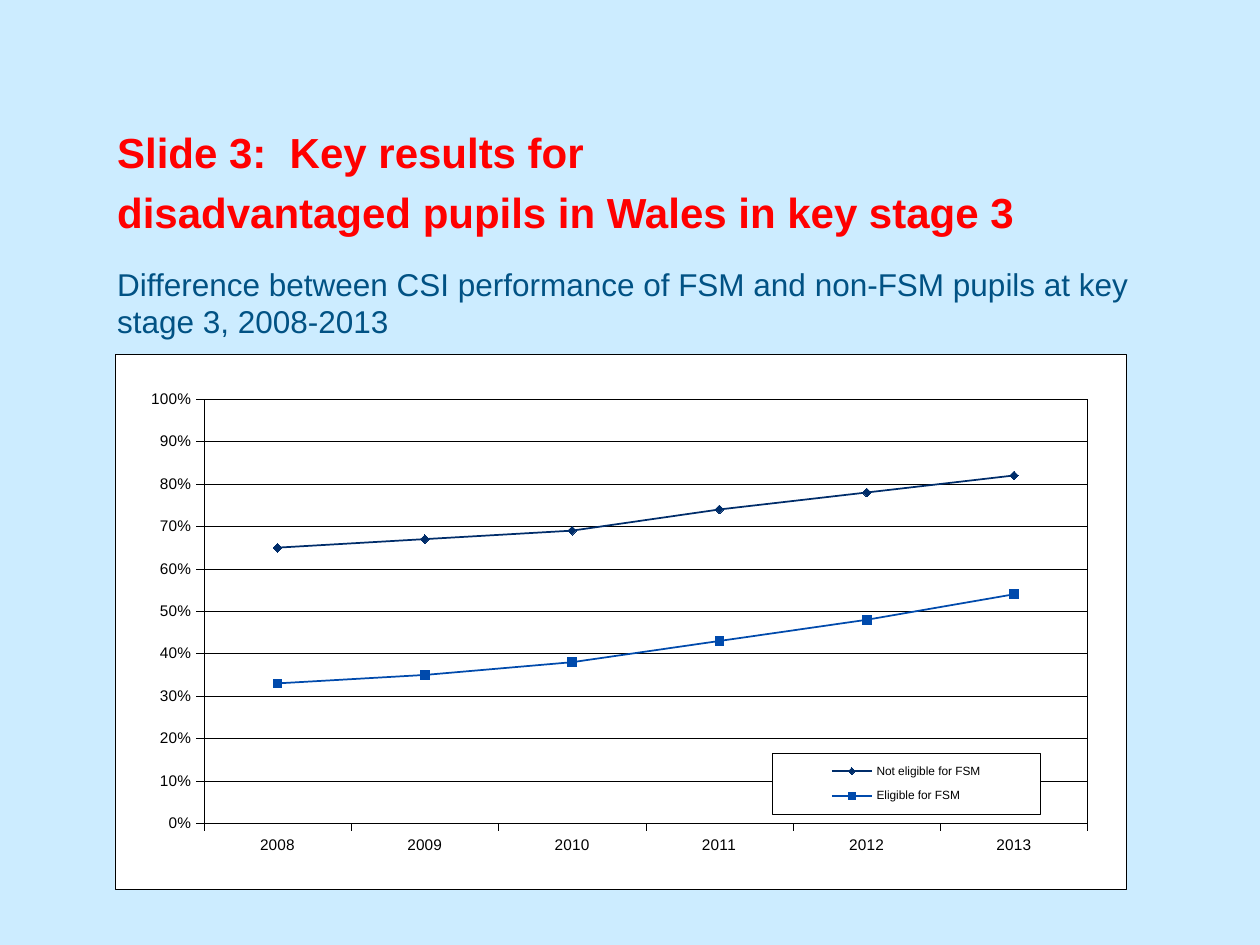
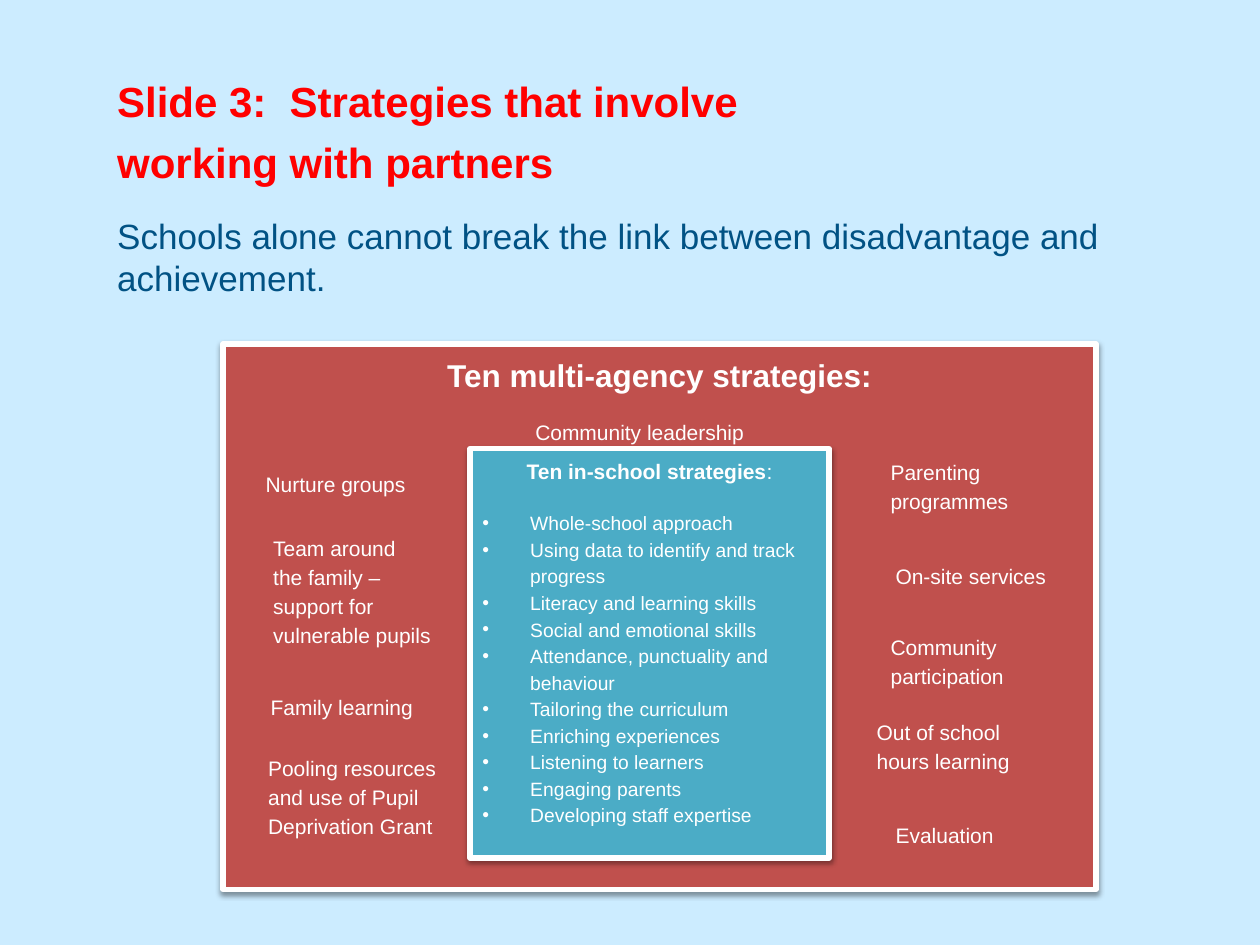
"""Build two slides on results and strategies for disadvantaged pupils."""
from dataclasses import dataclass

from lxml import etree
from pptx import Presentation
from pptx.chart.data import CategoryChartData
from pptx.dml.color import RGBColor
from pptx.enum.chart import XL_CHART_TYPE, XL_LEGEND_POSITION, XL_MARKER_STYLE, XL_TICK_MARK
from pptx.enum.shapes import MSO_SHAPE
from pptx.enum.text import MSO_ANCHOR, MSO_AUTO_SIZE, PP_ALIGN
from pptx.oxml import parse_xml
from pptx.oxml.ns import nsdecls, qn
from pptx.util import Inches, Pt

LINE_MARKERS = XL_CHART_TYPE.LINE_MARKERS
LEGEND_RIGHT = XL_LEGEND_POSITION.RIGHT
DIAMOND, SQUARE = XL_MARKER_STYLE.DIAMOND, XL_MARKER_STYLE.SQUARE
TICK_OUT = XL_TICK_MARK.OUTSIDE
RECTANGLE = MSO_SHAPE.RECTANGLE
TOP = MSO_ANCHOR.TOP
NO_FIT = MSO_AUTO_SIZE.NONE
LEFT, CENTER = PP_ALIGN.LEFT, PP_ALIGN.CENTER


@dataclass(frozen=True)
class Theme:
    font: str = "Arial"
    sky: str = "CCECFF"
    red: str = "FF0000"
    blue: str = "015284"
    brick: str = "C0504D"
    teal: str = "4BACC6"
    white: str = "FFFFFF"
    black: str = "000000"
    navy: str = "002D6A"
    royal: str = "004AAC"
    title: float = 24
    heading: float = 18
    label: float = 12
    item: float = 11
    axis: float = 8.8
    legend: float = 6.8


theme = Theme()
rgb = RGBColor.from_string

deck = Presentation()
deck.slide_width, deck.slide_height = Inches(10), Inches(7.5)
COLUMN, ROW = deck.slide_width / 100, deck.slide_height / 75
background = deck.slide_master.background.fill
background.solid()
background.fore_color.rgb = rgb(theme.sky)


def area(column, row, columns, rows):
    """Turn grid cells into left, top, width and height."""
    return int(column * COLUMN), int(row * ROW), int(columns * COLUMN), int(rows * ROW)


def write(paragraph, text, size, color, bold=False):
    """Add one formatted run to a paragraph."""
    run = paragraph.add_run()
    run.text = text
    run.font.name, run.font.size, run.font.bold = theme.font, Pt(size), bold
    run.font.color.rgb = rgb(color)


headings = [
    (9.5, ["Slide 3:  Key results for", "disadvantaged pupils in Wales in key stage 3"],
     "Difference between CSI performance of FSM and non-FSM pupils at key stage 3, 2008-2013", 18),
    (5.5, ["Slide 3:  Strategies that involve", "working with partners"],
     "Schools alone cannot break the link between disadvantage and achievement.", 20),
]
slides = []
for heading_row, title_lines, summary, summary_size in headings:
    slide = deck.slides.add_slide(deck.slide_layouts[1])
    slides.append(slide)
    title, body = slide.shapes.title, slide.placeholders[1]
    title.left, title.top, title.width, title.height = area(8.3, heading_row, 85, 10.5)
    body.left, body.top, body.width, body.height = area(8.3, heading_row + 11, 85, 7.5)
    for holder, lines, size, color, bold in (
        (title, title_lines, theme.title, theme.red, True),
        (body, [summary], summary_size, theme.blue, False),
    ):
        frame = holder.text_frame
        frame.vertical_anchor, frame.auto_size = TOP, NO_FIT
        for number, line in enumerate(lines):
            paragraph = frame.add_paragraph() if number else frame.paragraphs[0]
            properties = paragraph._p.get_or_add_pPr()
            properties.set("marL", "0")
            properties.set("indent", "0")
            etree.SubElement(properties, qn("a:buNone"))
            paragraph.alignment = LEFT
            paragraph.space_before = Pt(6 if number else 0)
            write(paragraph, line, size, color, bold)
results, strategies = slides

attainment = CategoryChartData(number_format="0%")
attainment.categories = ["2008", "2009", "2010", "2011", "2012", "2013"]
attainment.add_series("Not eligible for FSM", [0.65, 0.67, 0.69, 0.74, 0.78, 0.82])
attainment.add_series("Eligible for FSM", [0.33, 0.35, 0.38, 0.43, 0.48, 0.54])
chart = results.shapes.add_chart(LINE_MARKERS, *area(9.1, 28.1, 80.3, 42.5), attainment).chart
chart.has_title = False
chart.font.name, chart.font.size = theme.font, Pt(theme.axis)
chart.font.color.rgb = rgb(theme.black)

years, share = chart.category_axis, chart.value_axis
share.minimum_scale, share.maximum_scale, share.major_unit = 0, 1, 0.1
share.tick_labels.number_format, share.tick_labels.number_format_is_linked = "0%", False
share.has_major_gridlines = True
years.major_tick_mark = share.major_tick_mark = TICK_OUT
for rule in (years.format.line, share.format.line, share.major_gridlines.format.line):
    rule.color.rgb, rule.width = rgb(theme.black), Pt(0.25)

for series, color, marker in zip(chart.series, (theme.navy, theme.royal), (DIAMOND, SQUARE)):
    series.smooth = False
    series.format.line.color.rgb, series.format.line.width = rgb(color), Pt(1)
    series.marker.style, series.marker.size = marker, 5
    series.marker.format.fill.solid()
    series.marker.format.fill.fore_color.rgb = rgb(color)
    series.marker.format.line.color.rgb = rgb(color)
chart.plots[0].vary_by_categories = False

chart.has_legend = True
legend = chart.legend
legend.position, legend.include_in_layout = LEGEND_RIGHT, False
legend.font.name, legend.font.size = theme.font, Pt(theme.legend)
legend.font.color.rgb = rgb(theme.black)

plot_area = chart._chartSpace.chart.plotArea
for part, target, (x, y, w, h) in (
    (plot_area, '<c:layoutTarget val="inner"/>', (0.088, 0.084, 0.874, 0.793)),
    (legend._element, "", (0.65, 0.745, 0.265, 0.115)),
):
    for automatic in part.findall(qn("c:layout")):
        part.remove(automatic)
    layout = parse_xml(
        f'<c:layout {nsdecls("c")}><c:manualLayout>{target}'
        '<c:xMode val="edge"/><c:yMode val="edge"/>'
        f'<c:x val="{x}"/><c:y val="{y}"/><c:w val="{w}"/><c:h val="{h}"/>'
        '</c:manualLayout></c:layout>')
    if target:
        part.insert(0, layout)
    else:
        part.find(qn("c:legendPos")).addnext(layout)

framed_white = (
    f'<c:spPr {nsdecls("c", "a")}><a:solidFill><a:srgbClr val="{theme.white}"/></a:solidFill>'
    f'<a:ln w="{Pt(0.25)}"><a:solidFill><a:srgbClr val="{theme.black}"/></a:solidFill></a:ln></c:spPr>')
plot_area.append(parse_xml(framed_white))
for part in (chart._chartSpace, legend._element):
    part.find(qn("c:txPr")).addprevious(parse_xml(framed_white))

partner_labels = [
    ((41.5, 32.5, 19, 3), LEFT, ["Community leadership"]),
    ((69.7, 35.7, 15, 5.1), LEFT, ["Parenting programmes"]),
    ((69.4, 43.9, 15.3, 5.6), CENTER, ["On-site services"]),
    ((69.7, 49.6, 14.8, 5.6), LEFT, ["Community participation"]),
    ((68.6, 56.3, 15, 6.3), LEFT, ["Out of school hours learning"]),
    ((70.1, 64.5, 12, 3.6), LEFT, ["Evaluation"]),
    ((20.1, 36.6, 15.6, 3.2), LEFT, ["Nurture groups"]),
    ((20.7, 41.7, 14.9, 11.1), LEFT, ["Team around", "the family – support for", "vulnerable pupils"]),
    ((20.5, 54.3, 15.8, 3.9), LEFT, ["Family learning"]),
    ((20.3, 59.2, 17.7, 6.8), LEFT, ["Pooling resources and use of Pupil Deprivation Grant"]),
]
boxes = [((17.7, 27.3, 69.3, 43.3), theme.brick, True, CENTER, theme.heading, ["Ten multi-agency strategies:"])]
boxes += [(cells, theme.brick, False, align, theme.label, lines) for cells, align, lines in partner_labels]
boxes += [((37.3, 35.6, 28.5, 32.5), theme.teal, True, CENTER, theme.label, ["Ten in-school strategies"])]
for cells, fill, is_panel, align, size, lines in boxes:
    box = strategies.shapes.add_shape(RECTANGLE, *area(*cells))
    box.fill.solid()
    box.fill.fore_color.rgb = rgb(fill)
    box.shadow.inherit = False
    if is_panel:
        box.line.color.rgb, box.line.width = rgb(theme.white), Pt(3)
        box._element.spPr.find(qn("a:effectLst")).append(parse_xml(
            f'<a:outerShdw {nsdecls("a")} blurRad="{Pt(3.1)}" dist="{Pt(1.6)}" dir="5400000" rotWithShape="0">'
            f'<a:srgbClr val="{theme.black}"><a:alpha val="38000"/></a:srgbClr></a:outerShdw>'))
    else:
        box.line.fill.background()
    frame = box.text_frame
    frame.word_wrap, frame.vertical_anchor = True, TOP
    for number, line in enumerate(lines):
        paragraph = frame.add_paragraph() if number else frame.paragraphs[0]
        paragraph.alignment, paragraph.line_spacing = align, 1.15
        write(paragraph, line, size, theme.white, is_panel)

school_strategies = [
    "Whole-school approach",
    "Using data to identify and track progress",
    "Literacy and learning skills",
    "Social and emotional skills",
    "Attendance, punctuality and behaviour",
    "Tailoring the curriculum",
    "Enriching experiences",
    "Listening to learners",
    "Engaging parents",
    "Developing staff expertise",
]
write(frame.paragraphs[0], ":", theme.label, theme.white)
hanging = int(3.8 * COLUMN)
for number, strategy in enumerate(school_strategies):
    paragraph = frame.add_paragraph()
    properties = paragraph._p.get_or_add_pPr()
    properties.set("marL", str(hanging))
    properties.set("indent", str(-hanging))
    etree.SubElement(properties, qn("a:buFont"), typeface=theme.font)
    etree.SubElement(properties, qn("a:buChar"), char="•")
    paragraph.alignment, paragraph.line_spacing = LEFT, 1.15
    paragraph.space_before = Pt(0 if number else 14)
    write(paragraph, strategy, theme.item, theme.white)

deck.save("out.pptx")
